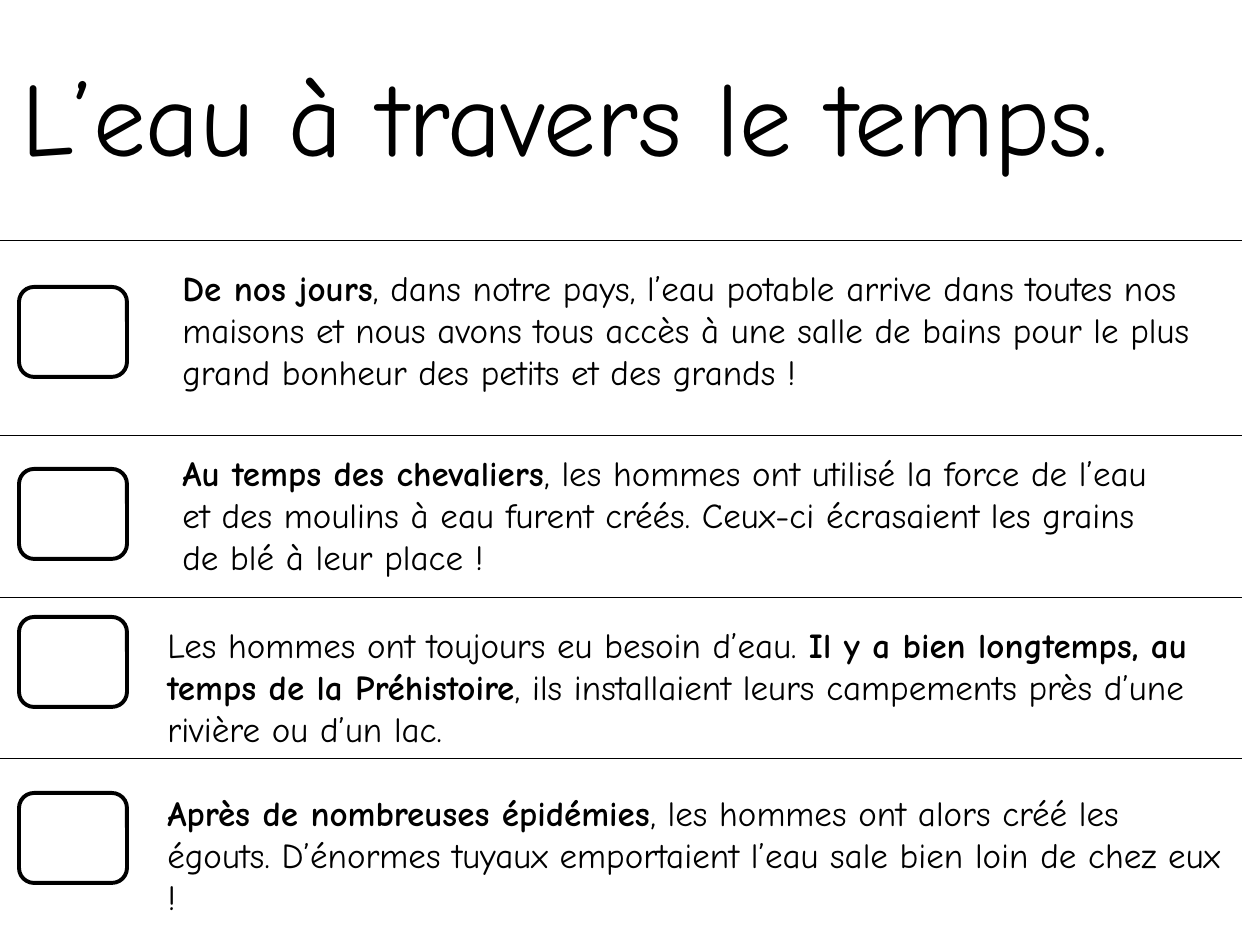
import pptx
import pptx.util
import pptx.dml.color
import pptx.enum.shapes
import pptx.enum.text
import lxml.etree

PX = 914400 // 126
BLACK = pptx.dml.color.RGBColor(0, 0, 0)
WHITE = pptx.dml.color.RGBColor(255, 255, 255)
FONT = {"name": "Comic Neue", "size": pptx.util.Pt(20), "bold": False}
KIND = pptx.enum.shapes.MSO_SHAPE
FIT = pptx.enum.text.MSO_AUTO_SIZE.SHAPE_TO_FIT_TEXT

deck = pptx.Presentation()
deck.slide_width = pptx.util.Inches(10)
deck.slide_height = pptx.util.Inches(7.5)
slide = deck.slides.add_slide(deck.slide_layouts[6])
shapes = slide.shapes


def write(area, runs, wrap=True, **extra):
    box = shapes.add_textbox(*[n * PX for n in area])
    frame = box.text_frame
    frame.word_wrap = wrap
    frame.auto_size = FIT
    for text, bold in runs:
        run = frame.paragraphs[0].add_run()
        run.text = text
        for key, value in {**FONT, "bold": bold, **extra}.items():
            setattr(run.font, key, value)
        run.font.color.rgb = BLACK
    return box


# Title
write((9, 45, 1262, 140), [("L’eau à travers le temps.", False)],
      wrap=False, size=pptx.util.Pt(60))

# Rows: rule above, answer box top, text area, runs of text and bold
rows = [
    (240, 287, (170, 260, 1057, 140), [
        ("De nos jours", True),
        (", dans notre pays, l’eau potable arrive dans toutes nos maisons "
         "et nous avons tous accès à une salle de bains pour le plus grand "
         "bonheur des petits et des grands !", False)]),
    (435, 469, (170, 445, 1008, 140), [
        ("Au temps des chevaliers", True),
        (", les hommes ont utilisé la force de l’eau et des moulins à eau "
         "furent créés. Ceux-ci écrasaient les grains de blé à leur place !",
         False)]),
    (597, 617, (155, 617, 1086, 140), [
        ("Les hommes ont toujours eu besoin d’eau. ", False),
        ("Il y a bien longtemps, au temps de la Préhistoire", True),
        (", ils installaient leurs campements près d’une rivière ou d’un "
         "lac.", False)]),
    (758, 793, (155, 785, 1086, 140), [
        ("Après de nombreuses épidémies", True),
        (", les hommes ont alors créé les égouts. D’énormes tuyaux "
         "emportaient l’eau sale bien loin de chez eux !", False)]),
]

for rule, top, area, runs in rows:
    # Dividing rule
    line = shapes.add_connector(pptx.enum.shapes.MSO_CONNECTOR.STRAIGHT,
                                0, rule * PX, 1242 * PX, rule * PX)
    line.line.width = pptx.util.Pt(0.5)
    line.line.color.rgb = BLACK
    props = line._element.spPr
    lxml.etree.SubElement(props, pptx.oxml.ns.qn("a:effectLst"))

    # Answer box
    box = shapes.add_shape(KIND.ROUNDED_RECTANGLE,
                           19 * PX, top * PX, 108 * PX, 90 * PX)
    box.shadow.inherit = False
    box.fill.solid()
    box.fill.fore_color.rgb = WHITE
    box.line.color.rgb = BLACK
    box.line.width = pptx.util.Pt(2.25)

    # Text
    write(area, runs)

deck.save("out.pptx")
